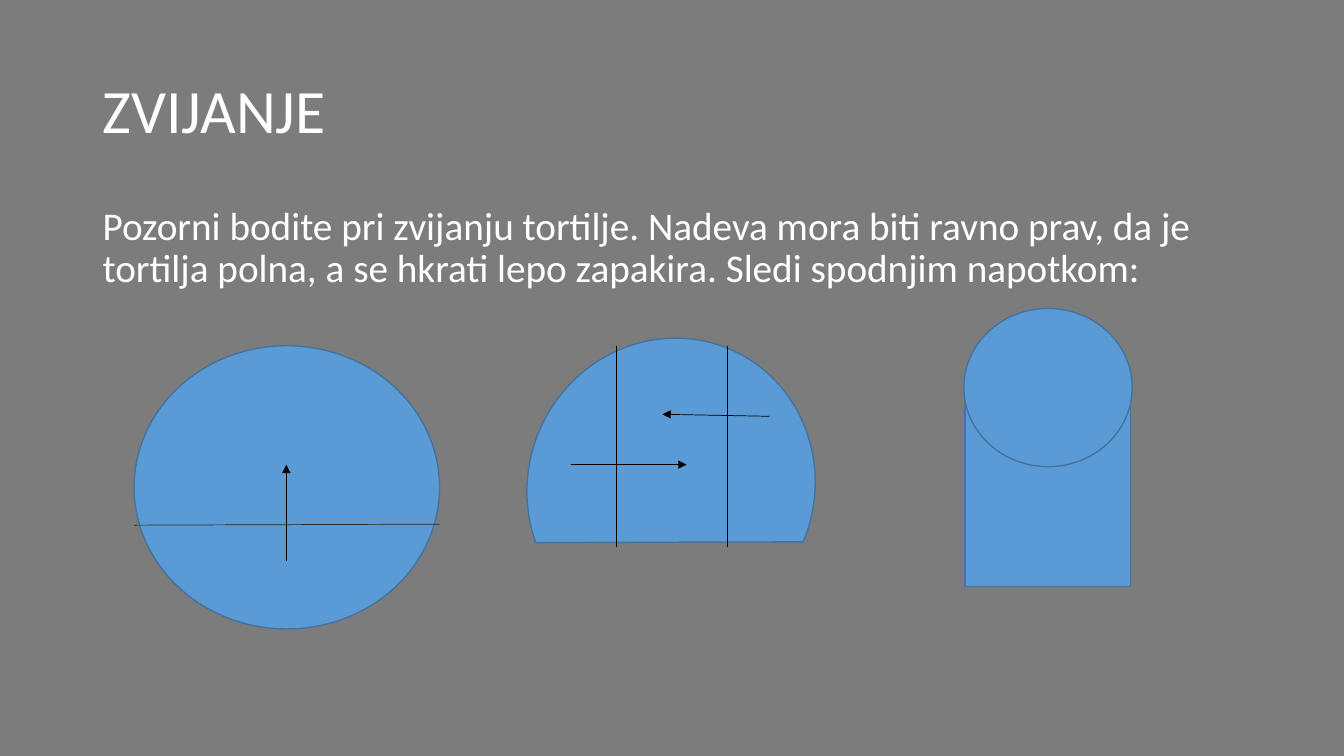
"""Build the slide that shows how to fold a tortilla."""
import pptx
import pptx.dml.color
import pptx.enum.shapes
import pptx.enum.text
import pptx.oxml.ns
import pptx.oxml.xmlchemy
import pptx.util

Inches, Pt = pptx.util.Inches, pptx.util.Pt
RGBColor = pptx.dml.color.RGBColor
Shape = pptx.enum.shapes.MSO_SHAPE
Anchor = pptx.enum.text.MSO_ANCHOR
new_element = pptx.oxml.xmlchemy.OxmlElement

GREY = RGBColor(0x7C, 0x7C, 0x7C)
WHITE = RGBColor(0xFF, 0xFF, 0xFF)
BLUE = RGBColor(0x5B, 0x9B, 0xD5)
DARK_BLUE = RGBColor(0x43, 0x73, 0x9E)
CHARCOAL = RGBColor(0x26, 0x26, 0x26)
BLACK = RGBColor(0, 0, 0)

TEXTS = [
    ("ZVIJANJE", (0.92, 0.4, 11.5, 1.45), 44, Anchor.MIDDLE, 0),
    ("Pozorni bodite pri zvijanju tortilje. Nadeva mora biti ravno prav, da je "
     "tortilja polna, a se hkrati lepo zapakira. Sledi spodnjim napotkom:",
     (0.92, 2, 11.5, 4.76), 28, Anchor.TOP, 10),
]
TORTILLAS = [
    (Shape.OVAL, (1.33, 3.43, 3.03, 2.81), 0),
    (Shape.CHORD, (5.17, 3.41, 2.97, 2.84), 112.6),
    (Shape.RECTANGLE, (9.57, 3.85, 1.64, 1.97), 0),
    (Shape.OVAL, (9.56, 3.06, 1.67, 1.57), 0),
]
FOLD_LINES = [
    ((1.33, 5.21, 4.36, 5.2), CHARCOAL),
    ((6.11, 3.43, 6.11, 5.43), BLACK),
    ((7.21, 3.43, 7.21, 5.43), BLACK),
]
FOLD_ARROWS = [
    (2.84, 5.57, 2.84, 4.61),
    (5.66, 4.61, 6.81, 4.61),
    (7.63, 4.13, 6.57, 4.11),
]


def apply(target, values):
    for name, value in values.items():
        setattr(target, name, value)


def add_text(page, text, place, size, anchor, space_before):
    box = page.shapes.add_textbox(*map(Inches, place))
    apply(box.text_frame, {"word_wrap": True, "vertical_anchor": anchor})
    para = box.text_frame.paragraphs[0]
    apply(para, {"line_spacing": 0.9, "space_before": Pt(space_before)})
    span = para.add_run()
    span.text = text
    apply(span.font, {"name": "Calibri", "size": Pt(size)})
    span.font.color.rgb = WHITE


def add_tortilla(page, kind, place, rotation):
    tortilla = page.shapes.add_shape(kind, *map(Inches, place))
    tortilla.rotation = rotation
    tortilla.shadow.inherit = False
    tortilla.fill.solid()
    tortilla.fill.fore_color.rgb = BLUE
    tortilla.line.color.rgb = DARK_BLUE
    tortilla.line.width = Pt(1)


def add_line(page, ends, color, arrow=False):
    straight = pptx.enum.shapes.MSO_CONNECTOR.STRAIGHT
    line = page.shapes.add_connector(straight, *map(Inches, ends))
    line.line.color.rgb = color
    line.line.width = Pt(0.5)
    properties = line.element.spPr
    if arrow:
        head = new_element("a:tailEnd")
        head.set("type", "triangle")
        properties.find(pptx.oxml.ns.qn("a:ln")).append(head)
    properties.append(new_element("a:effectLst"))


def main():
    deck = pptx.Presentation()
    apply(deck, {"slide_width": Inches(13.33), "slide_height": Inches(7.5)})
    page = deck.slides.add_slide(deck.slide_layouts[6])
    page.background.fill.solid()
    page.background.fill.fore_color.rgb = GREY
    for text in TEXTS:
        add_text(page, *text)
    for tortilla in TORTILLAS:
        add_tortilla(page, *tortilla)
    for ends, color in FOLD_LINES:
        add_line(page, ends, color)
    for ends in FOLD_ARROWS:
        add_line(page, ends, BLACK, arrow=True)
    deck.save("out.pptx")


if __name__ == "__main__":
    main()
